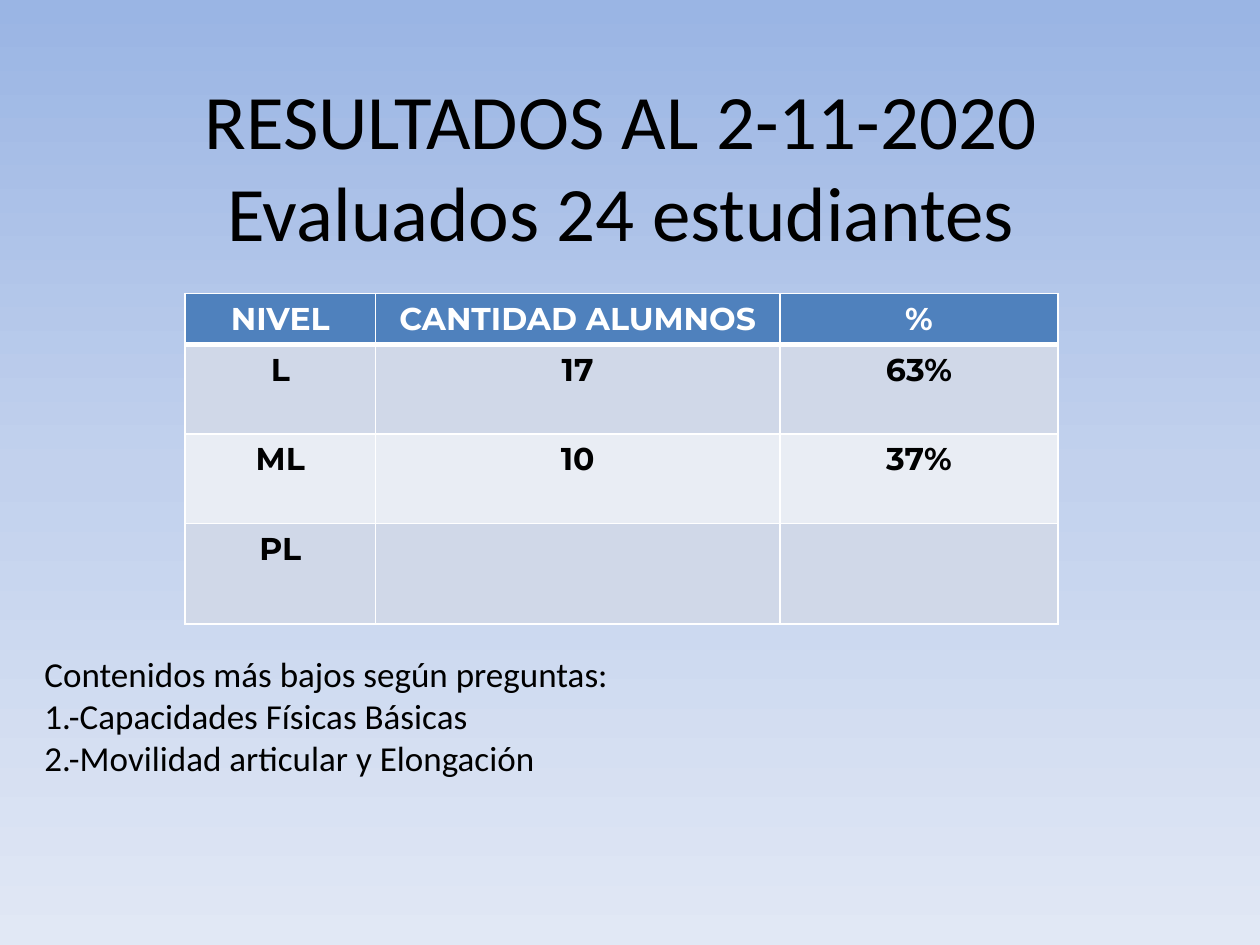
import copy
from dataclasses import dataclass

import lxml.etree
import pptx
import pptx.dml.color
import pptx.enum.text
import pptx.oxml.ns
import pptx.util

Cm, Pt = pptx.util.Cm, pptx.util.Pt
qn = pptx.oxml.ns.qn
PP_ALIGN = pptx.enum.text.PP_ALIGN
ANCHOR = pptx.enum.text.MSO_ANCHOR


@dataclass
class Row:
    values: tuple[str, ...]
    height: float
    fill: str
    color: str = "000000"
    top: float = 1
    bottom: float = 1


COL_WIDTHS = (3.84, 8.15, 5.61)
ROWS = (
    Row(("NIVEL", "CANTIDAD ALUMNOS", "%"), 1.03, "4F81BD", "FFFFFF", bottom=3),
    Row(("L", "17", "63%"), 1.8, "D0D8E8", top=3),
    Row(("ML", "10", "37%"), 1.8, "E9EDF4"),
    Row(("PL", "", ""), 2.03, "D0D8E8"),
)
CONTENTS = (
    "Contenidos más bajos según preguntas:",
    "1.-Capacidades Físicas Básicas",
    "2.-Movilidad articular y Elongación",
)


def rgb(value: str) -> pptx.dml.color.RGBColor:
    return pptx.dml.color.RGBColor.from_string(value)


def style(p, font: str, size: float, color: str, align, bold: bool = False) -> None:
    p.alignment = align
    p.font.name, p.font.size, p.font.bold = font, Pt(size), bold
    p.font.color.rgb = rgb(color)


def place(sp, left: float, top: float, width: float, height: float) -> None:
    sp.left, sp.top, sp.width, sp.height = map(Cm, (left, top, width, height))


def set_background(slide, colors: tuple[str, str, str]) -> None:
    fill = slide.background.fill
    fill.gradient()
    fill.gradient_angle = 270
    stops = slide.element.find(".//" + qn("a:gsLst"))
    stops.insert(1, copy.deepcopy(stops[0]))
    for i, (stop, color) in enumerate(zip(fill.gradient_stops, colors)):
        stop.position = i / 2
        stop.color.rgb = rgb(color)


def add_border(cell, side: str, width: float) -> None:
    tc_pr = cell._tc.get_or_add_tcPr()
    ln = lxml.etree.SubElement(tc_pr, qn("a:ln" + side), w=str(Pt(width)))
    solid = lxml.etree.SubElement(ln, qn("a:solidFill"))
    lxml.etree.SubElement(solid, qn("a:srgbClr"), val="FFFFFF")


def fill_cell(cell, text: str, row: Row) -> None:
    for side, width in (("L", 1), ("R", 1), ("T", row.top), ("B", row.bottom)):
        add_border(cell, side, width)
    cell.fill.solid()
    cell.fill.fore_color.rgb = rgb(row.fill)
    cell.text = text
    style(cell.text_frame.paragraphs[0], "Montserrat", 18, row.color,
          PP_ALIGN.CENTER, bold=True)


def add_results(slide, left: float, top: float) -> None:
    width, height = sum(COL_WIDTHS), sum(row.height for row in ROWS)
    table = slide.shapes.add_table(len(ROWS), len(COL_WIDTHS), Cm(left), Cm(top),
                                   Cm(width), Cm(height)).table
    for col, col_width in zip(table.columns, COL_WIDTHS):
        col.width = Cm(col_width)
    for i, row in enumerate(ROWS):
        table.rows[i].height = Cm(row.height)
        for j, text in enumerate(row.values):
            fill_cell(table.cell(i, j), text, row)


def main() -> None:
    prs = pptx.Presentation()
    prs.slide_width, prs.slide_height = Cm(25.4), Cm(19.05)
    slide = prs.slides.add_slide(prs.slide_layouts[1])
    set_background(slide, ("9AB5E4", "C2D1ED", "E1E8F5"))

    # Title
    title = slide.shapes.title
    place(title, 1.09, 1.12, 22.86, 4.39)
    tf = title.text_frame
    tf.text = "RESULTADOS AL 2-11-2020\vEvaluados 24 estudiantes"
    tf.auto_size = pptx.enum.text.MSO_AUTO_SIZE.NONE
    tf.vertical_anchor = ANCHOR.MIDDLE
    style(tf.paragraphs[0], "Calibri", 44, "000000", PP_ALIGN.CENTER)

    # Results table
    add_results(slide, 3.73, 5.92)

    # Weakest contents, unbulleted
    body = slide.placeholders[1]
    place(body, 0.64, 13.03, 23.8, 2.82)
    tf = body.text_frame
    tf.text = "\n".join(CONTENTS)
    tf.auto_size = pptx.enum.text.MSO_AUTO_SIZE.SHAPE_TO_FIT_TEXT
    tf.vertical_anchor = ANCHOR.TOP
    for p in tf.paragraphs:
        style(p, "Calibri", 20, "000000", PP_ALIGN.LEFT)
        p.space_before = Pt(0)
        p_pr = p._p.get_or_add_pPr()
        p_pr.set("marL", "0")
        p_pr.set("indent", "0")
        p_pr.find(qn("a:defRPr")).addprevious(lxml.etree.Element(qn("a:buNone")))

    prs.save("out.pptx")


if __name__ == "__main__":
    main()
